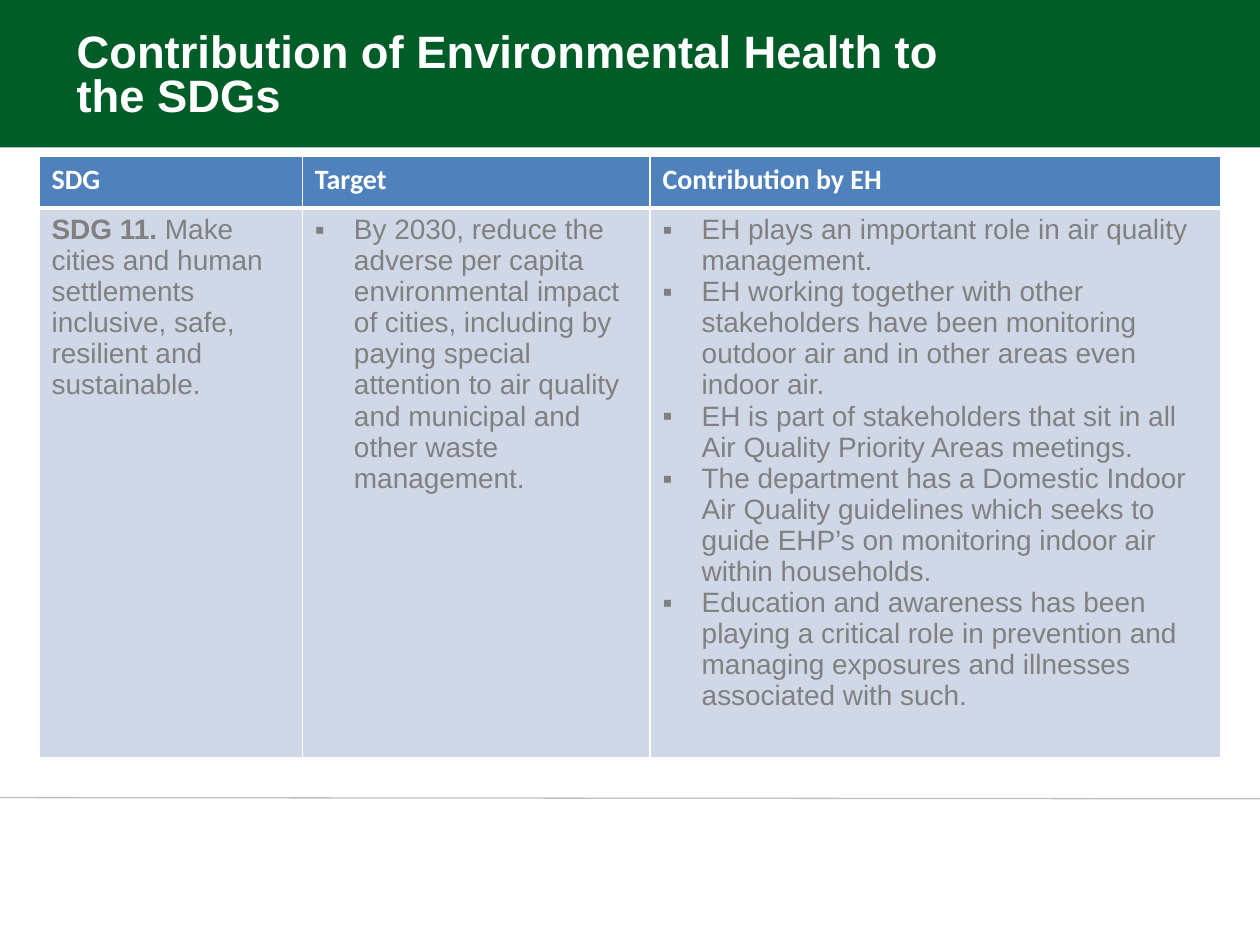
from dataclasses import dataclass

from lxml import etree
from pptx import Presentation
from pptx import util as u
from pptx.dml.color import RGBColor
from pptx.enum import shapes, text
from pptx.oxml.ns import qn


@dataclass(frozen=True)
class Theme:
    banner: str = "005D28"
    rule: str = "BFBFBF"
    header: str = "4F81BD"
    body: str = "D0D8E8"
    grey: str = "808080"
    white: str = "FFFFFF"
    title_size: float = 25.9
    table_size: float = 16
    title_font: str = "Arial"
    header_font: str = "Calibri"
    thin: float = 1
    thick: float = 3


@dataclass(frozen=True)
class Column:
    heading: str
    width: float
    items: tuple[str, ...]
    lead: str = ""
    bulleted: bool = True


THEME = Theme()
WIDTH, HEIGHT = 10, 7.5
ROW_HEIGHT = 0.41
INDENT = 0.31

COLUMNS = (
    Column("SDG", 2.09, (
        "Make cities and human settlements inclusive, safe, resilient and sustainable.",
    ), lead="SDG 11. ", bulleted=False),
    Column("Target", 2.76, (
        "By 2030, reduce the adverse per capita environmental impact of cities, including "
        "by paying special attention to air quality and municipal and other waste management.",
    )),
    Column("Contribution by EH", 4.53, (
        "EH plays an important role in air quality management.",
        "EH working together with other stakeholders have been monitoring outdoor "
        "air and in other areas even indoor air.",
        "EH is part of stakeholders that sit in all Air Quality Priority Areas meetings.",
        "The department has a Domestic Indoor Air Quality guidelines which seeks to "
        "guide EHP’s on monitoring indoor air within households.",
        "Education and awareness has been playing a critical role in prevention "
        "and managing exposures and illnesses associated with such.",
    )),
)


def colour(code: str) -> RGBColor:
    return RGBColor.from_string(code)


def write(para, words: str, *, size: float = THEME.table_size, font: str = THEME.title_font,
          fill: str = THEME.grey, bold: bool = False) -> None:
    span = para.add_run()
    span.text = words
    span.font.size = u.Pt(size)
    span.font.name = font
    span.font.bold = bold
    span.font.color.rgb = colour(fill)


def add_bullet(para) -> None:
    props = para._p.get_or_add_pPr()
    props.set("marL", str(u.Inches(INDENT)))
    props.set("indent", str(-u.Inches(INDENT)))
    etree.SubElement(props, qn("a:buFont")).set("typeface", THEME.title_font)
    etree.SubElement(props, qn("a:buChar")).set("char", "▪")


def style_cell(cell, fill: str, top: float, bottom: float) -> None:
    # Borders come before the fill in the cell properties
    props = cell._tc.get_or_add_tcPr()
    edges = {"L": THEME.thin, "R": THEME.thin, "T": top, "B": bottom}
    for side, weight in edges.items():
        edge = etree.SubElement(props, qn(f"a:ln{side}"), w=str(u.Pt(weight)))
        solid = etree.SubElement(edge, qn("a:solidFill"))
        etree.SubElement(solid, qn("a:srgbClr"), val=THEME.white)
    cell.fill.solid()
    cell.fill.fore_color.rgb = colour(fill)


def add_banner(page) -> None:
    banner = page.shapes.add_shape(
        shapes.MSO_SHAPE.RECTANGLE, 0, 0, u.Inches(WIDTH), u.Inches(1.17))
    banner.shadow.inherit = False
    banner.fill.solid()
    banner.fill.fore_color.rgb = colour(THEME.banner)
    banner.line.fill.background()


def add_rule(page) -> None:
    rule = page.shapes.add_connector(
        shapes.MSO_CONNECTOR.STRAIGHT, 0, u.Inches(6.33), u.Inches(WIDTH), u.Inches(6.34))
    rule.line.color.rgb = colour(THEME.rule)
    rule.line.width = u.Pt(0.75)
    etree.SubElement(rule._element.spPr, qn("a:effectLst"))


def add_title(page, words: str) -> None:
    box = page.shapes.add_textbox(
        u.Inches(0.51), u.Inches(0.13), u.Inches(7.32), u.Inches(0.88))
    frame = box.text_frame
    frame.word_wrap = True
    frame.vertical_anchor = text.MSO_ANCHOR.BOTTOM
    para = frame.paragraphs[0]
    para.line_spacing = 0.8
    write(para, words, size=THEME.title_size, fill=THEME.white, bold=True)


def fill_column(table, index: int, column: Column) -> None:
    table.columns[index].width = u.Inches(column.width)
    heading, body = table.cell(0, index), table.cell(1, index)
    style_cell(heading, THEME.header, THEME.thin, THEME.thick)
    style_cell(body, THEME.body, THEME.thick, THEME.thin)
    write(heading.text_frame.paragraphs[0], column.heading,
          font=THEME.header_font, fill=THEME.white, bold=True)
    frame = body.text_frame
    for number, item in enumerate(column.items):
        para = frame.add_paragraph() if number else frame.paragraphs[0]
        if column.bulleted:
            add_bullet(para)
        if column.lead:
            write(para, column.lead, bold=True)
        write(para, item)


def add_goal_table(page) -> None:
    height = u.Inches(4.77)
    holder = page.shapes.add_table(
        2, len(COLUMNS), u.Inches(0.31), u.Inches(1.24), u.Inches(9.37), height)
    for row in holder.table.rows:
        row.height = u.Inches(ROW_HEIGHT)
    for index, column in enumerate(COLUMNS):
        fill_column(holder.table, index, column)
    holder.height = height


def main() -> None:
    deck = Presentation()
    deck.slide_width, deck.slide_height = u.Inches(WIDTH), u.Inches(HEIGHT)
    page = deck.slides.add_slide(deck.slide_layouts[6])
    # Page frame
    add_banner(page)
    add_rule(page)
    # Content
    add_title(page, "Contribution of Environmental Health to the SDGs")
    add_goal_table(page)
    deck.save("out.pptx")


if __name__ == "__main__":
    main()
